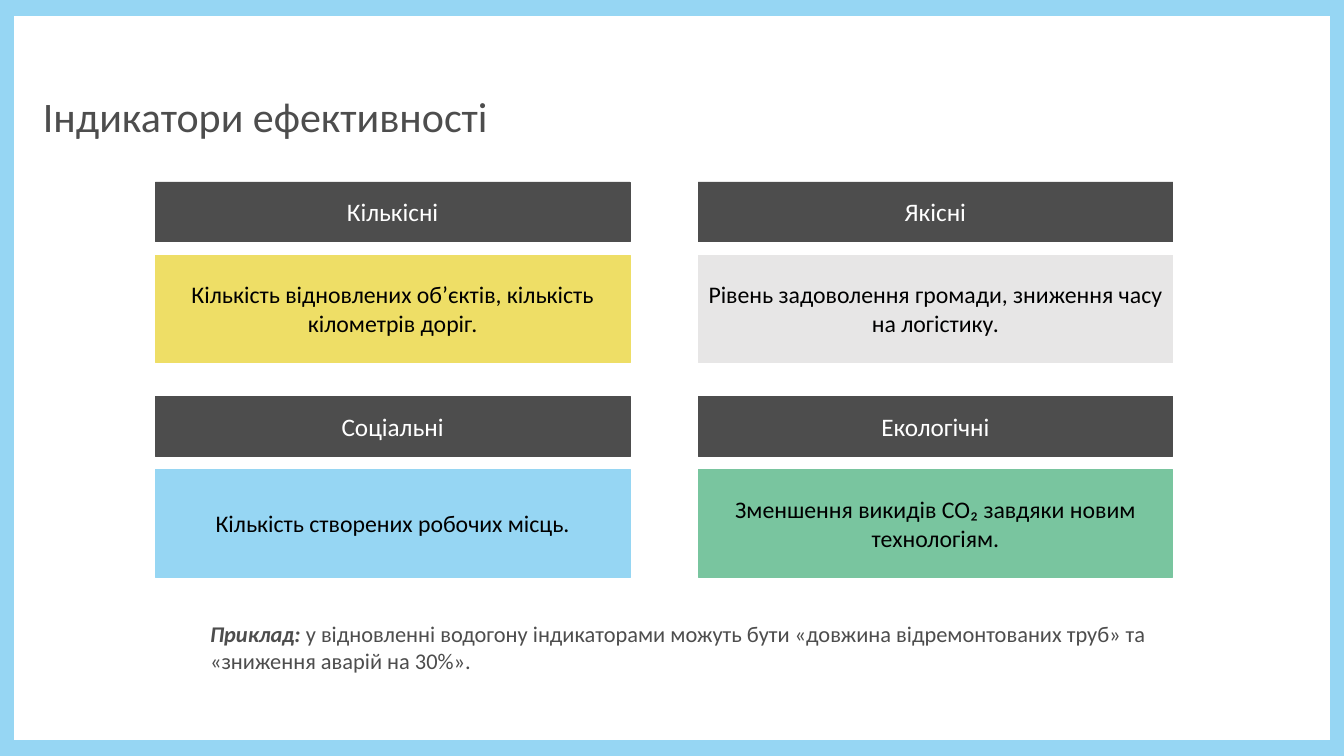
import pptx
import pptx.dml.color
import pptx.enum.shapes
import pptx.enum.text
import pptx.util

Pt = pptx.util.Pt
ALIGN = pptx.enum.text.PP_ALIGN
ANCHOR = pptx.enum.text.MSO_ANCHOR

TITLE = "Індикатори ефективності"
CARDS = [
    [("Кількісні", "Кількість відновлених об’єктів, кількість кілометрів доріг.", "EEDE66"),
     ("Якісні", "Рівень задоволення громади, зниження часу на логістику.", "E7E6E6")],
    [("Соціальні", "Кількість створених робочих місць.", "96D6F3"),
     ("Екологічні", "Зменшення викидів СО₂ завдяки новим технологіям.", "79C59F")],
]
EXAMPLE = [
    ("Приклад: ", True),
    ("у відновленні водогону індикаторами можуть бути «довжина відремонтованих труб» "
     "та «зниження аварій на 30%».", False),
]
DARK, SKY, WHITE, BLACK = "4D4D4D", "96D6F3", "FFFFFF", "000000"
PAGE_WIDTH, PAGE_HEIGHT = 1920, 1080
GRID_LEFT, GRID_TOP = 221.8, 259.8
COLUMN_STEP, ROW_STEP = 775.4, 306.4
CARD_WIDTH, HEADER_HEIGHT, BODY_HEIGHT, BODY_OFFSET = 678.2, 85.7, 153.4, 104.6


def color(value):
    return pptx.dml.color.RGBColor.from_string(value)


def write(frame, spans, size, ink, align, anchor):
    frame.word_wrap = True
    frame.auto_size = pptx.enum.text.MSO_AUTO_SIZE.NONE
    frame.vertical_anchor = anchor
    para = frame.paragraphs[0]
    para.alignment = align
    for text, strong in spans:
        span = para.add_run()
        span.text = text
        formats = {"name": "Calibri", "size": Pt(size), "bold": strong, "italic": strong}
        for name, value in formats.items():
            setattr(span.font, name, value)
        span.font.color.rgb = color(ink)
    return para


def add_rectangle(page, left, top, width, height, fill, line, line_width):
    box = page.shapes.add_shape(pptx.enum.shapes.MSO_SHAPE.RECTANGLE,
                                Pt(left), Pt(top), Pt(width), Pt(height))
    box.shadow.inherit = False
    if fill:
        box.fill.solid()
        box.fill.fore_color.rgb = color(fill)
    else:
        box.fill.background()
    box.line.color.rgb = color(line)
    box.line.width = Pt(line_width)
    return box


def add_label(page, left, top, height, fill, text, size, ink):
    box = add_rectangle(page, left, top, CARD_WIDTH, height, fill, fill, 1)
    write(box.text_frame, [(text, False)], size, ink, ALIGN.CENTER, ANCHOR.MIDDLE)


def main():
    """Build the slide of effectiveness indicators."""
    deck = pptx.Presentation()
    deck.slide_width, deck.slide_height = Pt(PAGE_WIDTH), Pt(PAGE_HEIGHT)
    page = deck.slides.add_slide(deck.slide_layouts[5])
    page.background.fill.solid()
    page.background.fill.fore_color.rgb = color(WHITE)

    add_rectangle(page, 7.2, 10, 1905, 1060, None, SKY, 25)

    title = page.shapes.title
    title.left, title.top, title.width, title.height = Pt(54), Pt(137), Pt(1098), Pt(65)
    para = write(title.text_frame, [(TITLE, False)], 60, DARK, ALIGN.LEFT, ANCHOR.MIDDLE)
    para.line_spacing = 0.9

    for row, cards in enumerate(CARDS):
        for column, (heading, body, fill) in enumerate(cards):
            left = GRID_LEFT + column * COLUMN_STEP
            top = GRID_TOP + row * ROW_STEP
            add_label(page, left, top + BODY_OFFSET, BODY_HEIGHT, fill, body, 34, BLACK)
            add_label(page, left, top, HEADER_HEIGHT, DARK, heading, 36, WHITE)

    example = page.shapes.add_textbox(Pt(293), Pt(882), Pt(1382.4), Pt(124))
    write(example.text_frame, EXAMPLE, 32, DARK, ALIGN.LEFT, ANCHOR.TOP)

    deck.save("out.pptx")


if __name__ == "__main__":
    main()
